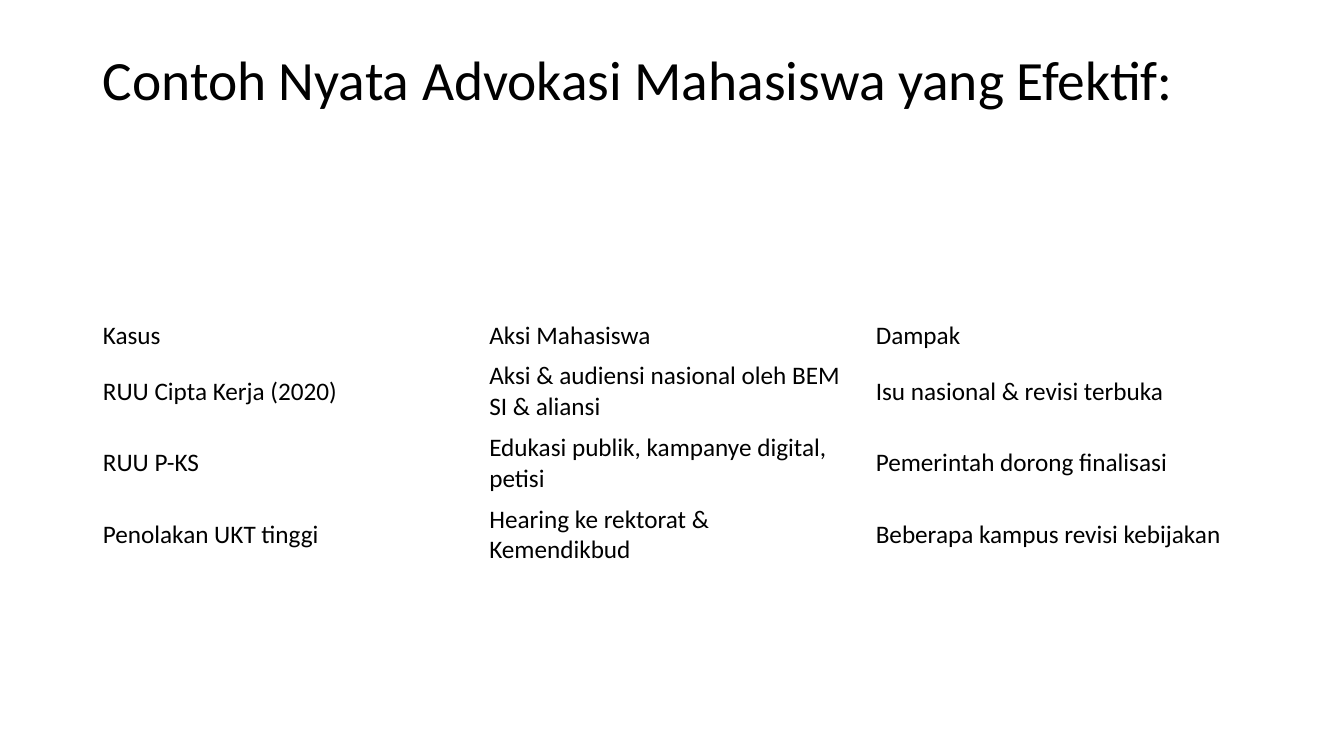
from pptx import Presentation
from pptx.dml.color import RGBColor
from pptx.enum.text import MSO_ANCHOR
from pptx.oxml.ns import qn
from pptx.util import Inches, Pt

TITLE = "Contoh Nyata Advokasi Mahasiswa yang Efektif:"
CASES = [
    ("Kasus", "Aksi Mahasiswa", "Dampak"),
    ("RUU Cipta Kerja (2020)", "Aksi & audiensi nasional oleh BEM SI & aliansi",
     "Isu nasional & revisi terbuka"),
    ("RUU P-KS", "Edukasi publik, kampanye digital, petisi",
     "Pemerintah dorong finalisasi"),
    ("Penolakan UKT tinggi", "Hearing ke rektorat & Kemendikbud",
     "Beberapa kampus revisi kebijakan"),
]
COLORS = {"text": "000000"}
FONT = "Calibri"
TITLE_SIZE, CELL_SIZE = 39.6, 18
LEFT, WIDTH = 0.92, 11.5
TITLE_TOP, TITLE_HEIGHT = 0.4, 1.45
TABLE_TOP, HEADER_HEIGHT, CASE_HEIGHT = 3.13, 0.4, 0.71
NO_GRID_STYLE = "{2D5ABB26-0587-4C30-8999-92F81FD0307C}"


def write(tf, text, size):
    p = tf.paragraphs[0]
    r = p.add_run()
    r.text = text
    for name, value in {"name": FONT, "size": Pt(size)}.items():
        setattr(r.font, name, value)
    r.font.color.rgb = RGBColor.from_string(COLORS["text"])
    return p


def add_title(slide):
    sp = slide.shapes.add_textbox(Inches(LEFT), Inches(TITLE_TOP),
                                  Inches(WIDTH), Inches(TITLE_HEIGHT))
    tf = sp.text_frame
    layout = {"word_wrap": True, "vertical_anchor": MSO_ANCHOR.TOP,
              "margin_top": Inches(0.12)}
    for name, value in layout.items():
        setattr(tf, name, value)
    write(tf, TITLE, TITLE_SIZE).line_spacing = 0.9


def add_case_table(slide):
    heights = [HEADER_HEIGHT] + [CASE_HEIGHT] * (len(CASES) - 1)
    columns = len(CASES[0])
    table = slide.shapes.add_table(
        len(CASES), columns, Inches(LEFT), Inches(TABLE_TOP),
        Inches(WIDTH), Inches(sum(heights))).table
    table.first_row = table.horz_banding = False
    table._tbl.tblPr.find(qn("a:tableStyleId")).text = NO_GRID_STYLE
    for column in table.columns:
        column.width = Inches(WIDTH / columns)
    for row, height, texts in zip(table.rows, heights, CASES):
        row.height = Inches(height)
        for cell, text in zip(row.cells, texts):
            cell.fill.background()
            cell.vertical_anchor = MSO_ANCHOR.MIDDLE
            write(cell.text_frame, text, CELL_SIZE)


def main():
    prs = Presentation()
    prs.slide_width, prs.slide_height = Inches(13.33), Inches(7.5)
    slide = prs.slides.add_slide(prs.slide_layouts[6])
    add_title(slide)
    add_case_table(slide)
    prs.save("out.pptx")


if __name__ == "__main__":
    main()
